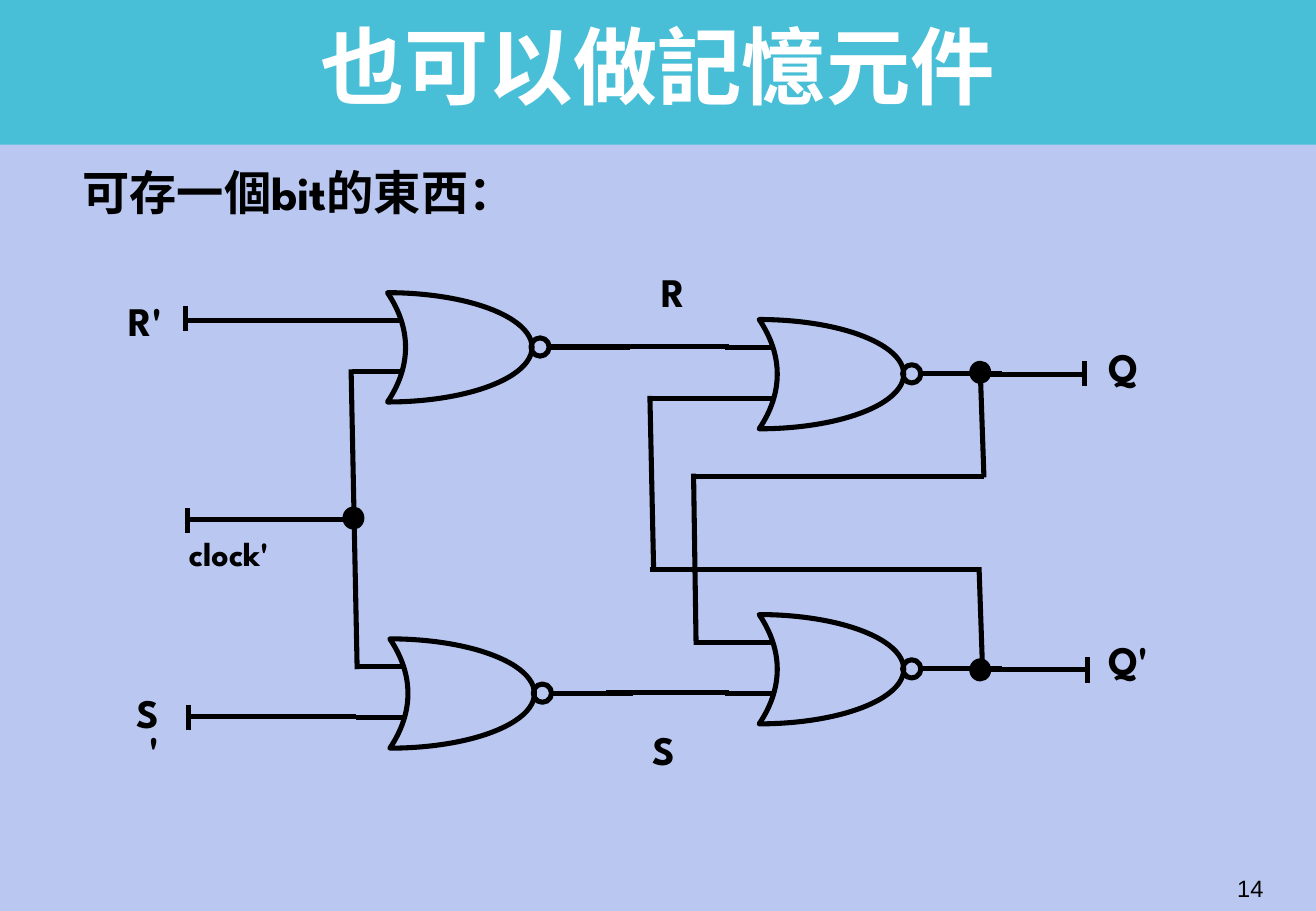
from dataclasses import dataclass

from lxml.etree import SubElement
from pptx import Presentation
from pptx.dml.color import RGBColor as RGB
from pptx.enum.shapes import MSO_CONNECTOR as Connector, MSO_SHAPE as Shape
from pptx.enum.text import MSO_ANCHOR as Anchor, PP_ALIGN as Align
from pptx.oxml.ns import qn
from pptx.util import Pt


@dataclass(frozen=True)
class Theme:
    background: RGB = RGB(0xBA, 0xC8, 0xF1)
    banner: RGB = RGB(0x49, 0xBF, 0xD7)
    ink: RGB = RGB(0, 0, 0)
    white: RGB = RGB(0xFF, 0xFF, 0xFF)
    font: str = "League Spartan"
    number_font: str = "Arial"
    title: int = 50
    body: int = 28
    label: int = 24
    clock: int = 20
    number: int = 14
    wire: float = 3
    dot_line: float = 1.5


class CircuitSlide:
    def __init__(self, prs, theme):
        self.theme = theme
        self.s = prs.slides.add_slide(prs.slide_layouts[6])
        fill = self.s.background.fill
        fill.solid()
        fill.fore_color.rgb = theme.background

    def shape(self, kind, x, y, w, h, fill=None, line=None, shapes=None):
        """Add a preset shape; line is the width of an ink outline."""
        shapes = shapes or self.s.shapes
        sp = shapes.add_shape(kind, Pt(x), Pt(y), Pt(w), Pt(h))
        sp.shadow.inherit = False
        if fill is None:
            sp.fill.background()
        else:
            sp.fill.solid()
            sp.fill.fore_color.rgb = fill
        if line is None:
            sp.line.fill.background()
        else:
            sp.line.color.rgb = self.theme.ink
            sp.line.width = Pt(line)
        return sp

    def wire(self, x1, y1, x2, y2, shapes=None):
        shapes = shapes or self.s.shapes
        cxn = shapes.add_connector(Connector.STRAIGHT, Pt(x1), Pt(y1), Pt(x2), Pt(y2))
        cxn.line.color.rgb = self.theme.ink
        cxn.line.width = Pt(self.theme.wire)
        SubElement(cxn._element.spPr, qn("a:effectLst"))

    def gate(self, x, y):
        """Group a NOR gate whose body has its top left corner at x, y."""
        shapes = self.s.shapes.add_group_shape().shapes
        body = self.shape(Shape.MOON, x, y, 85.7, 64.8, line=self.theme.wire, shapes=shapes)
        body.adjustments[0] = 0.875
        body._element.spPr.xfrm.set("flipH", "1")
        for dy in (16.6, 46.8):
            self.wire(x - 20.2, y + dy, x + 7.9, y + dy, shapes)
        self.wire(x + 144, y + 32.2, x + 95.8, y + 32.2, shapes)
        self.shape(Shape.OVAL, x + 85, y + 26.8, 10.8, 10.8, line=self.theme.wire, shapes=shapes)

    def terminal(self, x, y):
        self.wire(x, y - 7.5, x, y + 7.5)

    def junction(self, x, y):
        self.shape(Shape.OVAL, x - 5.75, y - 6.1, 11.5, 12.2, self.theme.ink, self.theme.dot_line)

    def text(self, text, x, y, w, h, size, inset=(7.2, 3.6), anchor=Anchor.TOP,
             font=None, para=None):
        """Add one paragraph; font and para override its format values."""
        tf = self.s.shapes.add_textbox(Pt(x), Pt(y), Pt(w), Pt(h)).text_frame
        side, end = map(Pt, inset)
        frame = {"word_wrap": True, "vertical_anchor": anchor, "margin_left": side,
                 "margin_right": side, "margin_top": end, "margin_bottom": end}
        p = tf.paragraphs[0]
        r = p.add_run()
        r.text = text
        look = {"name": self.theme.font, "size": Pt(size), "bold": True} | (font or {})
        color = look.pop("color", self.theme.ink)
        for target, values in ((tf, frame), (p, para or {}), (r.font, look)):
            for name, value in values.items():
                setattr(target, name, value)
        r.font.color.rgb = color


GATES = [(231.1, 378.7), (450, 364.3), (450, 189.4), (229.7, 173.5)]
WIRES = [
    # inputs
    (110.2, 190.1, 209.5, 190.1),
    (110.9, 308.2, 210.2, 308.2),
    (111.6, 424.8, 211, 424.8),
    # clock branch
    (208.1, 218.9, 211.7, 396.7),
    # between the gates
    (359.3, 205.2, 432, 205.2),
    (359.3, 410.4, 432, 410.4),
    # outputs
    (579.6, 221.8, 643, 221.8),
    (586.8, 396.7, 645.1, 396.7),
    # feedback from Q
    (581, 218.9, 583.2, 283),
    (409.7, 282.2, 583.2, 282.2),
    (411.1, 280.8, 412.6, 382.3),
    (412.6, 380.9, 442.8, 380.9),
    # feedback from Q'
    (580.3, 336.2, 582.5, 400.3),
    (385.2, 337.7, 581, 337.7),
    (385.2, 234.7, 387.4, 336.2),
    (385.2, 236.2, 439.9, 236.2),
]
TERMINALS = [(110.2, 189), (110.9, 308.5), (111.6, 425.2), (643, 221.4), (644.4, 397.1)]
JUNCTIONS = [(209.5, 307.1), (581, 220.7), (581, 397.1)]
LABELS = [
    ("R'", 69.1, 172.1, 41, 65.5),
    ("R", 385.2, 154.8, 27.4, 36.7),
    ("S", 379.4, 426.2, 39.6, 36.7),
    ("Q", 650.2, 199.4, 67.7, 36),
    ("Q'", 650.2, 373, 67.7, 65.5),
]


def main():
    prs = Presentation()
    prs.slide_width, prs.slide_height = Pt(780), Pt(540)
    theme = Theme()
    c = CircuitSlide(prs, theme)

    c.shape(Shape.RECTANGLE, 0, 0, 780, 85.7, theme.banner)
    c.text("也可以做記憶元件", 58.3, 10.1, 663.1, 56.9, theme.title, anchor=Anchor.MIDDLE,
           font={"color": theme.white}, para={"alignment": Align.CENTER})
    c.text("可存一個bit的東西：", 41.8, 97.2, 435.6, 44.6, theme.body,
           para={"line_spacing": 0.9})

    for gate in GATES:
        c.gate(*gate)
    for wire in WIRES:
        c.wire(*wire)
    for terminal in TERMINALS:
        c.terminal(*terminal)
    for junction in JUNCTIONS:
        c.junction(*junction)

    for label in LABELS:
        c.text(*label, theme.label)
    tight = {"alignment": Align.RIGHT, "line_spacing": Pt(22), "space_after": Pt(20)}
    c.text("clock'", 20.2, 315.4, 140.4, 88.6, theme.clock, inset=(1.4, 2.2), para=tight)
    c.text("S'", 69.1, 411.1, 32.4, 29.5, theme.label, para=tight)

    c.text("14", 593.3, 508.3, 162.7, 36, theme.number, anchor=Anchor.MIDDLE,
           font={"name": theme.number_font, "bold": False}, para={"alignment": Align.RIGHT})
    prs.save("out.pptx")


if __name__ == "__main__":
    main()
